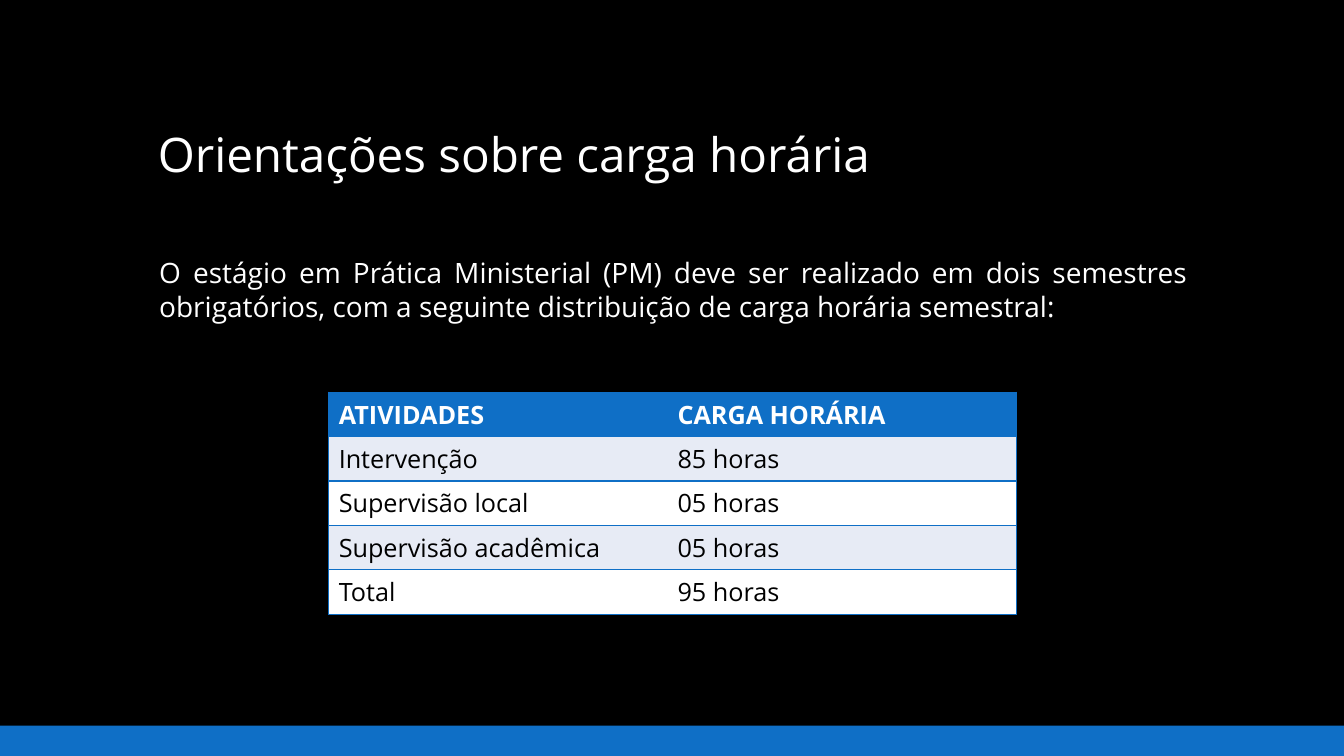
import pptx
import pptx.util
import pptx.dml.color
import pptx.enum.shapes
import pptx.enum.text
import pptx.oxml
import pptx.oxml.ns

Inch = pptx.util.Inches
Pt = pptx.util.Pt
Color = pptx.dml.color.RGBColor
Align = pptx.enum.text.PP_ALIGN
Anchor = pptx.enum.text.MSO_ANCHOR

WIDE, HIGH = 13.33, 7.5
BLACK = Color(0, 0, 0)
WHITE = Color(255, 255, 255)
BLUE = Color(0x0F, 0x6F, 0xC6)
PALE = Color(0xE7, 0xEB, 0xF5)
FACE = "Open Sans"

TITLE = "Orientações sobre carga horária"
INTRO = ("O estágio em Prática Ministerial (PM) deve ser realizado em dois semestres "
         "obrigatórios, com a seguinte distribuição de carga horária semestral:")
HOURS = [("ATIVIDADES", "CARGA HORÁRIA"),
         ("Intervenção", "85 horas"),
         ("Supervisão local", "05 horas"),
         ("Supervisão acadêmica", "05 horas"),
         ("Total", "95 horas")]


def apply(item, form):
    for name, value in form.items():
        setattr(item, name, value)


def write(frame, text, size, color, bold=False, **form):
    """Put one styled paragraph in a text frame."""
    par = frame.paragraphs[0]
    par.text = text
    apply(par, form)
    font = par.runs[0].font
    apply(font, {"name": FACE, "size": Pt(size), "bold": bold})
    font.color.rgb = color


def edge(cell, sides):
    """Draw the given sides of a cell and hide the others."""
    props = cell._tc.get_or_add_tcPr()
    for spot, side in enumerate("LRTB"):
        paint = (f'<a:solidFill><a:srgbClr val="{BLUE}"/></a:solidFill>'
                 if side in sides else "<a:noFill/>")
        line = pptx.oxml.parse_xml(
            f'<a:ln{side} {pptx.oxml.ns.nsdecls("a")} w="{Pt(1)}">{paint}</a:ln{side}>')
        props.insert(spot, line)


def band(slide, box):
    bar = slide.shapes.add_shape(
        pptx.enum.shapes.MSO_SHAPE.RECTANGLE, *map(Inch, box))
    bar.shadow.inherit = False
    bar.fill.solid()
    bar.fill.fore_color.rgb = BLUE
    bar.line.fill.background()


def head(slide, box):
    title = slide.shapes.title
    apply(title, dict(zip(("left", "top", "width", "height"), map(Inch, box))))
    apply(title.text_frame, {"vertical_anchor": Anchor.BOTTOM, "word_wrap": True,
                             "auto_size": pptx.enum.text.MSO_AUTO_SIZE.NONE})
    write(title.text_frame, TITLE, 34, WHITE, alignment=Align.LEFT, line_spacing=0.9)


def intro(slide, box):
    frame = slide.shapes.add_textbox(*map(Inch, box)).text_frame
    frame.word_wrap = True
    write(frame, INTRO, 20, WHITE, alignment=Align.JUSTIFY)


def grid(slide, box):
    left, top, width, height = box
    table = slide.shapes.add_table(len(HOURS), 2, *map(Inch, box)).table
    apply(table, {"first_row": False, "horz_banding": False})
    first = 3.36
    for col, size in zip(table.columns, (first, width - first)):
        col.width = Inch(size)
    for row, texts in enumerate(HOURS):
        table.rows[row].height = Inch(height / len(HOURS))
        for col, text in enumerate(texts):
            cell = table.cell(row, col)
            top_row = row == 0
            cell.fill.solid()
            cell.fill.fore_color.rgb = BLUE if top_row else (WHITE, PALE)[row % 2]
            write(cell.text_frame, text, 18, WHITE if top_row else BLACK, top_row)
            edge(cell, "LR"[col] + "TB")


def main():
    deck = pptx.Presentation()
    apply(deck, {"slide_width": Inch(WIDE), "slide_height": Inch(HIGH)})
    slide = deck.slides.add_slide(deck.slide_layouts[5])
    slide.background.fill.solid()
    slide.background.fill.fore_color.rgb = BLACK

    # Bottom band, title, table and paragraph
    band(slide, (0, HIGH * 0.96, WIDE, HIGH * 0.04))
    head(slide, (WIDE * 0.11, 0.51, WIDE * 0.78, HIGH * 0.18))
    grid(slide, (3.26, 3.89, 6.82, 2.03))
    intro(slide, (1.48, 2.49, WIDE * 0.78, 0.77))
    deck.save("out.pptx")


if __name__ == "__main__":
    main()
